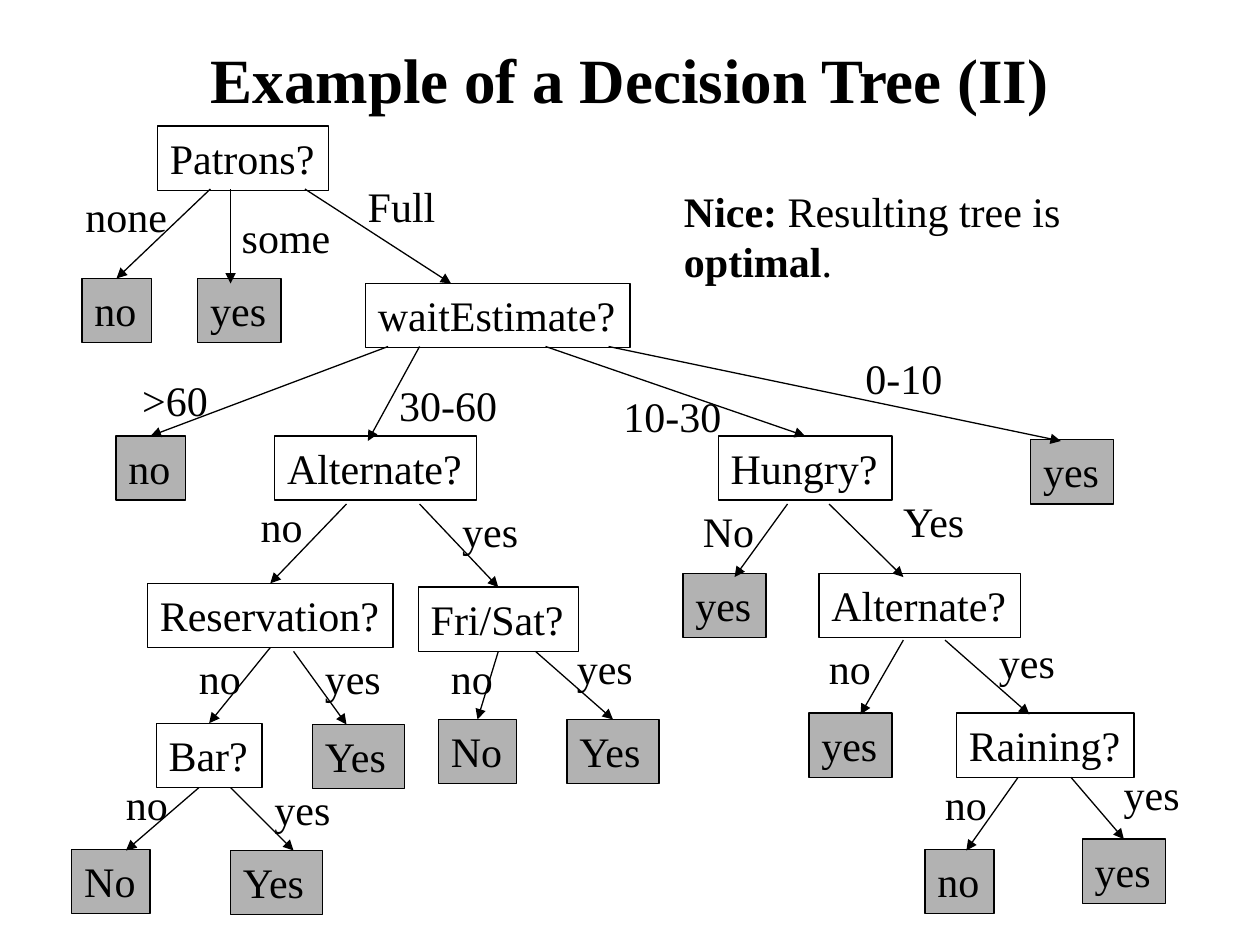
from dataclasses import dataclass

import pptx
import pptx.dml.color
import pptx.enum.shapes
import pptx.enum.text
import pptx.oxml.ns
import pptx.util
import lxml.etree

Inches = pptx.util.Inches
FONT = "Times New Roman"
BLACK, GREY = "000000", "B2B2B2"
TALL = 0.51
NEAR = 0.05
TOP, BOTTOM = 0, 2
ANCHOR = pptx.enum.text.MSO_ANCHOR
GROW = pptx.enum.text.MSO_AUTO_SIZE.SHAPE_TO_FIT_TEXT
FRAME = {"word_wrap": False, "auto_size": GROW, "vertical_anchor": ANCHOR.TOP}
WIDE = {"word_wrap": True}
HEAD = {"word_wrap": True, "vertical_anchor": ANCHOR.MIDDLE}

WIDTH = {
    "no": 0.55, "yes": 0.66, "No": 0.62, "Yes": 0.73,
    "Patrons?": 1.36, "waitEstimate?": 2.1, "Alternate?": 1.6,
    "Reservation?": 1.95, "Fri/Sat?": 1.27, "Bar?": 0.84,
    "Hungry?": 1.38, "Raining?": 1.41,
    "none": 0.87, "some": 0.93, "Full": 0.76, ">60": 0.74,
    "30-60": 1, "10-30": 1, "0-10": 0.83,
}


@dataclass
class Node:
    text: str
    x: float
    y: float

    @property
    def leaf(self) -> bool:
        return not self.text.endswith("?")

    def side(self, site: int) -> tuple[float, float]:
        """Middle of the top or bottom side."""
        drop = TALL if site == BOTTOM else 0
        return self.x + WIDTH[self.text] / 2, self.y + drop


@dataclass
class Branch:
    root: str
    goal: str
    start: tuple[float, float]
    end: tuple[float, float]
    label: str
    spot: tuple[float, float]


NODES = {
    "patrons": Node("Patrons?", 1.25, 1),
    "none": Node("no", 0.65, 2.21),
    "some": Node("yes", 1.57, 2.21),
    "wait": Node("waitEstimate?", 2.9, 2.25),
    "long": Node("no", 0.92, 3.46),
    "alt": Node("Alternate?", 2.18, 3.46),
    "hungry": Node("Hungry?", 5.7, 3.46),
    "short": Node("yes", 8.18, 3.49),
    "reserve": Node("Reservation?", 1.17, 4.63),
    "fri": Node("Fri/Sat?", 3.32, 4.66),
    "full": Node("yes", 5.42, 4.55),
    "alt2": Node("Alternate?", 6.5, 4.55),
    "bar": Node("Bar?", 1.24, 5.74),
    "booked": Node("Yes", 2.48, 5.75),
    "week": Node("No", 3.48, 5.71),
    "weekend": Node("Yes", 4.5, 5.71),
    "stay": Node("yes", 6.42, 5.66),
    "rain": Node("Raining?", 7.59, 5.66),
    "dry bar": Node("No", 0.57, 6.74),
    "has bar": Node("Yes", 1.83, 6.75),
    "dry": Node("no", 7.34, 6.74),
    "wet": Node("yes", 8.59, 6.66),
}

BRANCHES = [
    Branch("patrons", "none", (1.67, 1.5), (0.92, 2.25), "none", (0.58, 1.46)),
    Branch("patrons", "some", (1.83, 1.5), (1.83, 2.25), "some", (1.82, 1.63)),
    Branch("patrons", "wait", (2.42, 1.5), (3.58, 2.25), "Full", (2.82, 1.38)),
    Branch("wait", "long", (3.08, 2.75), (1.17, 3.5), ">60", (1.03, 2.92)),
    Branch("wait", "alt", (3.33, 2.75), (2.92, 3.5), "30-60", (3.07, 2.96)),
    Branch("wait", "hungry", (4.33, 2.75), (6.42, 3.42), "10-30", (4.85, 3.05)),
    Branch("wait", "short", (4.83, 2.75), (8.42, 3.5), "0-10", (6.77, 2.75)),
    Branch("alt", "reserve", (2.75, 4), (2.17, 4.58), "no", (1.97, 3.92)),
    Branch("alt", "fri", (3.33, 4), (3.92, 4.67), "yes", (3.57, 3.96)),
    Branch("hungry", "full", (6.25, 4), (5.83, 4.58), "No", (5.48, 3.96)),
    Branch("hungry", "alt2", (6.58, 4), (7.17, 4.58), "Yes", (7.07, 3.88)),
    Branch("reserve", "bar", (2.17, 5.17), (1.67, 5.75), "no", (1.48, 5.13)),
    Branch("reserve", "booked", (2.33, 5.17), (2.75, 5.75), "yes", (2.48, 5.13)),
    Branch("fri", "week", (4, 5.17), (3.75, 5.75), "no", (3.48, 5.13)),
    Branch("fri", "weekend", (4.25, 5.17), (4.83, 5.75), "yes", (4.48, 5.05)),
    Branch("alt2", "stay", (7.17, 5.08), (6.83, 5.67), "no", (6.48, 5.05)),
    Branch("alt2", "rain", (7.5, 5.08), (8.17, 5.67), "yes", (7.83, 5)),
    Branch("bar", "dry bar", (1.58, 6.25), (1, 6.75), "no", (0.9, 6.13)),
    Branch("bar", "has bar", (1.83, 6.25), (2.33, 6.75), "yes", (2.08, 6.17)),
    Branch("rain", "dry", (8.08, 6.17), (7.67, 6.75), "no", (7.4, 6.13)),
    Branch("rain", "wet", (8.5, 6.17), (8.92, 6.67), "yes", (8.82, 6.05)),
]


def paint(fill, tint: str) -> None:
    fill.solid()
    fill.fore_color.rgb = pptx.dml.color.RGBColor.from_string(tint)


def write(shape, runs: list[tuple[str, bool]], form: dict, size: int = 24,
          align=pptx.enum.text.PP_ALIGN.LEFT) -> None:
    """Fill a shape with one paragraph of (text, bold) runs."""
    frame = shape.text_frame
    for name, value in form.items():
        setattr(frame, name, value)
    para = frame.paragraphs[0]
    para.alignment = align
    for text, bold in runs:
        run = para.add_run()
        run.text = text
        look = {"name": FONT, "size": pptx.util.Pt(size), "bold": bold}
        for name, value in look.items():
            setattr(run.font, name, value)
        paint(run.font.fill, BLACK)


def add_text(slide, x: float, y: float, wide: float, tall: float):
    return slide.shapes.add_textbox(*map(Inches, (x, y, wide, tall)))


def stroke(line) -> None:
    line.width = pptx.util.Pt(0.75)
    paint(line.fill, BLACK)


def add_node(slide, node: Node):
    box = slide.shapes.add_shape(
        pptx.enum.shapes.MSO_SHAPE.RECTANGLE,
        *map(Inches, (node.x, node.y, WIDTH[node.text], TALL)))
    box.shadow.inherit = False
    stroke(box.line)
    if node.leaf:
        paint(box.fill, GREY)
    else:
        box.fill.background()
    write(box, [(node.text, False)], FRAME)
    return box


def meets(node: Node, site: int, point: tuple[float, float]) -> bool:
    return all(abs(a - b) < NEAR for a, b in zip(node.side(site), point))


def add_branch(slide, branch: Branch, boxes: dict) -> None:
    """Draw the arrow, joined where it meets a side's middle, and its label."""
    arrow = slide.shapes.add_connector(
        pptx.enum.shapes.MSO_CONNECTOR.STRAIGHT,
        *map(Inches, branch.start + branch.end))
    stroke(arrow.line)
    qn = pptx.oxml.ns.qn
    props = arrow._element.spPr
    lxml.etree.SubElement(props.find(qn("a:ln")), qn("a:tailEnd"), type="triangle")
    lxml.etree.SubElement(props, qn("a:effectLst"))
    if meets(NODES[branch.root], BOTTOM, branch.start):
        arrow.begin_connect(boxes[branch.root], BOTTOM)
    if meets(NODES[branch.goal], TOP, branch.end):
        arrow.end_connect(boxes[branch.goal], TOP)
    label = add_text(slide, *branch.spot, WIDTH[branch.label], 0.5)
    write(label, [(branch.label, False)], FRAME)


def main() -> None:
    deck = pptx.Presentation()
    deck.slide_width, deck.slide_height = Inches(10), Inches(7.5)
    slide = deck.slides.add_slide(deck.slide_layouts[6])
    write(add_text(slide, 0.75, 0, 8.5, 1.25),
          [("Example of a Decision Tree (II)", True)], HEAD, 36,
          pptx.enum.text.PP_ALIGN.CENTER)
    boxes = {key: add_node(slide, node) for key, node in NODES.items()}
    for branch in BRANCHES:
        add_branch(slide, branch, boxes)
    write(add_text(slide, 5.33, 1.42, 3.6, 0.9),
          [("Nice:", True), (" Resulting tree is ", False),
           ("optimal", True), (".", False)], WIDE)
    deck.save("out.pptx")


if __name__ == "__main__":
    main()
